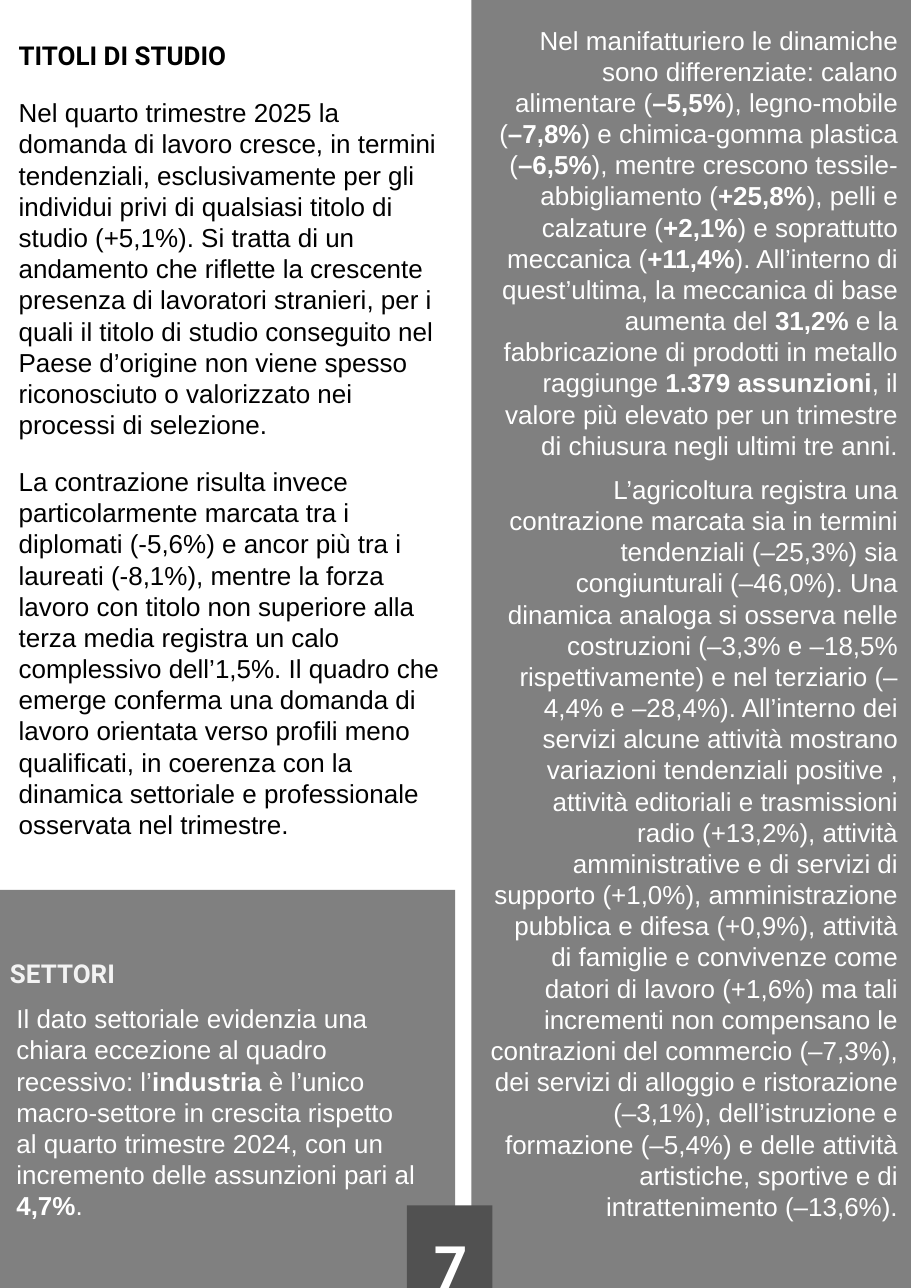
from pptx import Presentation
from pptx.dml.color import RGBColor
from pptx.enum.shapes import MSO_SHAPE
from pptx.enum.text import MSO_AUTO_SIZE as AutoSize, PP_ALIGN as Align
from pptx.util import Pt

BLACK = RGBColor(0x00, 0x00, 0x00)
WHITE = RGBColor(0xFF, 0xFF, 0xFF)
PALE = RGBColor(0xF3, 0xF3, 0xF3)
GREY = RGBColor(0x80, 0x80, 0x80)
DARK = RGBColor(0x51, 0x51, 0x51)

deck = Presentation()
deck.slide_width, deck.slide_height = Pt(841.68), Pt(1190.16)
page = deck.slides.add_slide(deck.slide_layouts[6])


def add_frame(left, top, width, height, inset_x, inset_y, auto_size=AutoSize.SHAPE_TO_FIT_TEXT):
    frame = page.shapes.add_textbox(Pt(left), Pt(top), Pt(width), Pt(height)).text_frame
    frame.word_wrap = True
    frame.auto_size = auto_size
    frame.margin_left = frame.margin_right = Pt(inset_x)
    frame.margin_top = frame.margin_bottom = Pt(inset_y)
    return frame


def write(frame, text, color, gap=0, font="Arial", size=24, heading=False, align=None):
    first = not frame.paragraphs[0].runs
    paragraph = frame.paragraphs[0] if first else frame.add_paragraph()
    paragraph.alignment = align
    paragraph.space_before = Pt(0 if first else gap)
    paragraph.space_after = Pt(gap)
    if heading:
        paragraph.line_spacing = 1.5
        paragraph.font.bold = True
    paragraph.font.name = font
    paragraph.font.size = Pt(size)
    paragraph.font.color.rgb = color
    for index, part in enumerate(text.split("**")):
        run = paragraph.add_run()
        run.text = part
        if index % 2:
            run.font.bold = True


panels = [
    (-15.12, 822.24, 435.6, 367.92, GREY),
    (435.6, -30.24, 429.12, 1397.52, GREY),
    (375.84, 1113.84, 79.2, 82.08, DARK),
]
for left, top, width, height, color in panels:
    panel = page.shapes.add_shape(MSO_SHAPE.RECTANGLE, Pt(left), Pt(top), Pt(width), Pt(height))
    panel.shadow.inherit = False
    panel.fill.solid()
    panel.fill.fore_color.rgb = color
    panel.line.fill.background()

INSET = 15.12

studies = add_frame(2.16, 7.2, 429.12, 815.04, INSET, INSET)
write(studies, "TITOLI DI STUDIO", BLACK, 12, "Roboto", heading=True)
for text in (
    "Nel quarto trimestre 2025 la domanda di lavoro cresce, in termini tendenziali, "
    "esclusivamente per gli individui privi di qualsiasi titolo di studio (+5,1%). "
    "Si tratta di un andamento che riflette la crescente presenza di lavoratori stranieri, "
    "per i quali il titolo di studio conseguito nel Paese d’origine non viene spesso "
    "riconosciuto o valorizzato nei processi di selezione.",
    "La contrazione risulta invece particolarmente marcata tra i diplomati (-5,6%) e ancor "
    "più tra i laureati (-8,1%), mentre la forza lavoro con titolo non superiore alla terza "
    "media registra un calo complessivo dell’1,5%. Il quadro che emerge conferma una domanda "
    "di lavoro orientata verso profili meno qualificati, in coerenza con la dinamica "
    "settoriale e professionale osservata nel trimestre.",
):
    write(studies, text, BLACK, 12)

sectors_title = add_frame(2.16, 866.88, 350.64, 44.64, 7.2, 3.6)
write(sectors_title, "SETTORI", PALE, font="Roboto", heading=True)

sectors = add_frame(0, 911.52, 401.76, 233.28, INSET, INSET)
write(
    sectors,
    "Il dato settoriale evidenzia una chiara eccezione al quadro recessivo: l’**industria** "
    "è l’unico macro-settore in crescita rispetto al quarto trimestre 2024, con un "
    "incremento delle assunzioni pari al **4,7%**.",
    WHITE,
)

industries = add_frame(437.76, 7.2, 406.8, 1215.36, INSET, INSET)
for text in (
    "Nel manifatturiero le dinamiche sono differenziate: calano alimentare (**–5,5%**), "
    "legno-mobile (**–7,8%**) e chimica-gomma plastica (**–6,5%**), mentre crescono "
    "tessile-abbigliamento (**+25,8%**), pelli e calzature (**+2,1%**) e soprattutto "
    "meccanica (**+11,4%**). All’interno di quest’ultima, la meccanica di base aumenta del "
    "**31,2%** e la fabbricazione di prodotti in metallo raggiunge **1.379 assunzioni**, "
    "il valore più elevato per un trimestre di chiusura negli ultimi tre anni.",
    "L’agricoltura registra una contrazione marcata sia in termini tendenziali (–25,3%) sia "
    "congiunturali (–46,0%). Una dinamica analoga si osserva nelle costruzioni (–3,3% e "
    "–18,5% rispettivamente) e nel terziario (–4,4% e –28,4%). All’interno dei servizi "
    "alcune attività mostrano variazioni tendenziali positive , attività editoriali e "
    "trasmissioni radio (+13,2%), attività amministrative e di servizi di supporto (+1,0%), "
    "amministrazione pubblica e difesa (+0,9%), attività di famiglie e convivenze come "
    "datori di lavoro (+1,6%) ma tali incrementi non compensano le contrazioni del commercio "
    "(–7,3%), dei servizi di alloggio e ristorazione (–3,1%), dell’istruzione e formazione "
    "(–5,4%) e delle attività artistiche, sportive e di intrattenimento (–13,6%).",
):
    write(industries, text, WHITE, 6, align=Align.RIGHT)

page_number = add_frame(393.84, 1097.28, 46.08, 60.48, 7.2, 7.2, AutoSize.NONE)
write(page_number, "7", WHITE, font="Roboto", size=54, heading=True)

deck.save("out.pptx")
